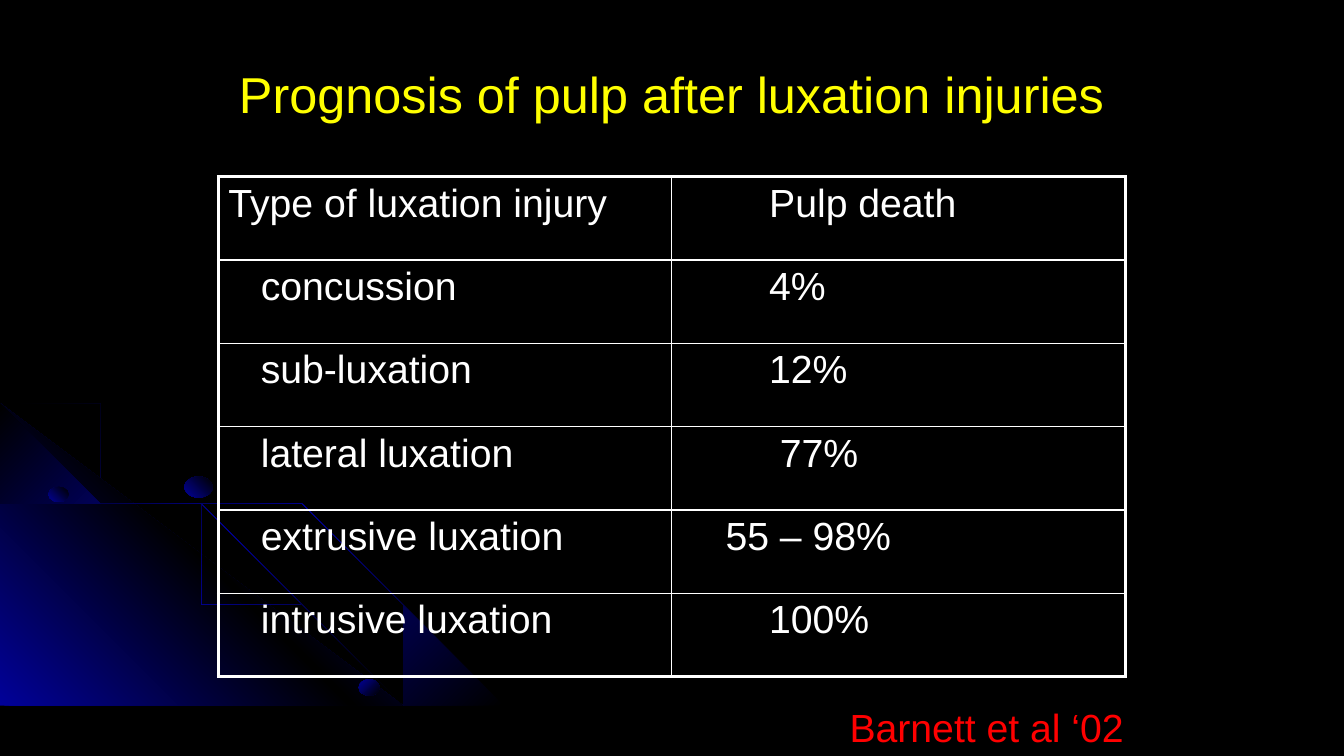
from lxml import etree
from pptx import Presentation
from pptx.dml.color import RGBColor
from pptx.enum.shapes import MSO_SHAPE
from pptx.enum.text import MSO_ANCHOR, PP_ALIGN
from pptx.oxml import parse_xml
from pptx.oxml.ns import qn
from pptx.util import Cm, Pt

OVAL = MSO_SHAPE.OVAL
MIDDLE = MSO_ANCHOR.MIDDLE
LEFT, CENTER = PP_ALIGN.LEFT, PP_ALIGN.CENTER
FONT = "Arial"
BLACK, BLUE, WHITE, YELLOW, RED = "000000", "010199", "FFFFFF", "FFFF00", "FF0000"
NAMESPACE = "http://schemas.openxmlformats.org/drawingml/2006/main"
GRID_UNIT = Cm(2.54)  # one unit of the outline coordinates below

TITLE = "Prognosis of pulp after luxation injuries"
CITATION = "Barnett et al ‘02"

# injury, its indent in cm, pulp death, its indent in cm
ROWS = [
    ("Type of luxation injury", 0, "Pulp death", 2.2),
    ("concussion", 0.82, "4%", 2.2),
    ("sub-luxation", 0.82, "12%", 2.2),
    ("lateral luxation", 0.82, "77%", 2.47),
    ("extrusive luxation", 0.82, "55 – 98%", 1.1),
    ("intrusive luxation", 0.82, "100%", 2.2),
]
TABLE_LEFT, TABLE_TOP = 5.5, 4.45
COLUMN_WIDTH, ROW_HEIGHT = 11.43, 2.1

OUTER_ARC = [
    (0.76, 4.47), (0.37, 4.41), (0, 4.35), (0, 4.38), (0.37, 4.43), (0.75, 4.49),
    (1.29, 4.61), (1.8, 4.78), (2.31, 4.99), (2.78, 5.23), (3.21, 5.49), (3.61, 5.79),
    (3.97, 6.12), (4.31, 6.49), (4.5, 6.73), (4.67, 6.98), (4.81, 7.23), (4.93, 7.49),
    (4.96, 7.49), (4.83, 7.23), (4.69, 6.98), (4.53, 6.73), (4.33, 6.48), (4, 6.11),
    (3.63, 5.78), (3.22, 5.48), (2.79, 5.21), (2.32, 4.97), (1.82, 4.77), (1.31, 4.59),
]
CORNER_GLOW = [(4.29, 7.49), (0, 7.49), (0, 4.27)]
INNER_ARC = [
    (3.8, 7.14), (3.92, 7.32), (4.01, 7.49), (4.04, 7.49), (3.94, 7.3), (3.82, 7.12),
    (3.55, 6.76), (3.23, 6.4), (2.86, 6.06), (2.46, 5.76), (2.03, 5.49), (1.56, 5.26),
    (1.05, 5.05), (0.54, 4.88), (0, 4.75), (0, 4.77), (0.51, 4.9), (1.03, 5.07),
    (1.53, 5.28), (2, 5.51), (2.44, 5.78), (2.84, 6.08), (3.21, 6.41), (3.53, 6.77),
]
MIDDLE_ARC = [
    (0, 4.42), (0, 4.44), (0.49, 4.57), (0.99, 4.75), (1.46, 4.94), (1.89, 5.18),
    (2.31, 5.44), (2.69, 5.75), (3.03, 6.05), (3.37, 6.41), (3.56, 6.67), (3.74, 6.94),
    (3.89, 7.22), (4.01, 7.49), (4.04, 7.49), (3.91, 7.2), (3.76, 6.93), (3.58, 6.65),
    (3.39, 6.39), (3.06, 6.03), (2.72, 5.73), (2.33, 5.43), (1.91, 5.16), (1.49, 4.93),
    (1.01, 4.73), (0.51, 4.55),
]
ARC_COLORS = (BLACK, BLUE, BLACK)
OUTLINES = [  # points, gradient colours, angle
    (OUTER_ARC, ARC_COLORS, 45),
    (CORNER_GLOW, (BLUE, BLACK, BLUE), 315),
    (INNER_ARC, ARC_COLORS, 45),
    (MIDDLE_ARC, ARC_COLORS, 45),
]
BEADS = [  # left, top, width, height in cm, gradient angle
    (1.22, 12.27, 0.51, 0.38, 315),
    (9.04, 17.12, 0.53, 0.41, 45),
    (4.65, 12.01, 0.71, 0.53, 315),
]


def rgb(value):
    return RGBColor.from_string(value)


def paint_gradient(shape, colors, angle):
    """Fill with evenly spaced colours; the angle runs clockwise."""
    shape.shadow.inherit = False
    shape.line.fill.background()
    shape.fill.gradient()
    gradient = shape._element.spPr.find(qn("a:gradFill"))
    step = 100000 // (len(colors) - 1)
    stops = "".join(
        f'<a:gs pos="{index * step}"><a:srgbClr val="{color}"/></a:gs>'
        for index, color in enumerate(colors)
    )
    gradient.getparent().replace(gradient, parse_xml(
        f'<a:gradFill xmlns:a="{NAMESPACE}" rotWithShape="1"><a:gsLst>{stops}</a:gsLst>'
        f'<a:lin ang="{angle * 60000}" scaled="1"/></a:gradFill>'
    ))


def write(frame, text, size, color, align=LEFT):
    frame.text = text
    para = frame.paragraphs[0]
    para.alignment = align
    font = para.runs[0].font
    font.name, font.size, font.color.rgb = FONT, Pt(size), rgb(color)


def add_text(page, left, top, width, height, text, size, color, align=LEFT, wrap=True):
    box = page.shapes.add_textbox(Cm(left), Cm(top), Cm(width), Cm(height))
    box.text_frame.word_wrap = wrap
    write(box.text_frame, text, size, color, align)
    return box


def set_borders(cell, widths):
    """Draw white borders; widths are points for left, right, top, bottom."""
    properties = cell._tc.get_or_add_tcPr()
    for index, (side, width) in enumerate(zip("LRTB", widths)):
        line = etree.Element(qn(f"a:ln{side}"), w=str(Pt(width)))
        fill = etree.SubElement(line, qn("a:solidFill"))
        etree.SubElement(fill, qn("a:srgbClr"), val=WHITE)
        properties.insert(index, line)


def add_backdrop(page):
    for points, colors, angle in OUTLINES:
        builder = page.shapes.build_freeform(*points[0], scale=GRID_UNIT)
        builder.add_line_segments(points[1:], close=True)
        paint_gradient(builder.convert_to_shape(), colors, angle)
    for *place, angle in BEADS:
        bead = page.shapes.add_shape(OVAL, *map(Cm, place))
        paint_gradient(bead, (BLUE, BLACK), angle)


def add_prognosis_table(page):
    last = len(ROWS) - 1
    table = page.shapes.add_table(
        len(ROWS), 2, Cm(TABLE_LEFT), Cm(TABLE_TOP),
        Cm(2 * COLUMN_WIDTH), Cm(len(ROWS) * ROW_HEIGHT),
    ).table
    table.first_row = table.horz_banding = False
    for row, (injury, injury_indent, death, death_indent) in enumerate(ROWS):
        entries = ((injury, injury_indent), (death, death_indent))
        for column, (text, indent) in enumerate(entries):
            cell = table.cell(row, column)
            write(cell.text_frame, text, 28, WHITE)
            cell.text_frame.paragraphs[0]._p.get_or_add_pPr().set("marL", str(Cm(indent)))
            cell.fill.background()
            on_edge = (column == 0, column == 1, row == 0, row == last)
            set_borders(cell, [2.25 if edge else 1 for edge in on_edge])


def main():
    deck = Presentation()
    deck.slide_width, deck.slide_height = Cm(33.87), Cm(19.05)
    page = deck.slides.add_slide(deck.slide_layouts[6])
    page.background.fill.solid()
    page.background.fill.fore_color.rgb = rgb(BLACK)
    add_backdrop(page)
    title = add_text(page, 1.69, 0.76, 30.48, 3.18, TITLE, 36, YELLOW, CENTER)
    title.text_frame.vertical_anchor = MIDDLE
    add_prognosis_table(page)
    add_text(page, 21.16, 17.6, 7.44, 1.45, CITATION, 28, RED, wrap=False)
    deck.save("out.pptx")


if __name__ == "__main__":
    main()
